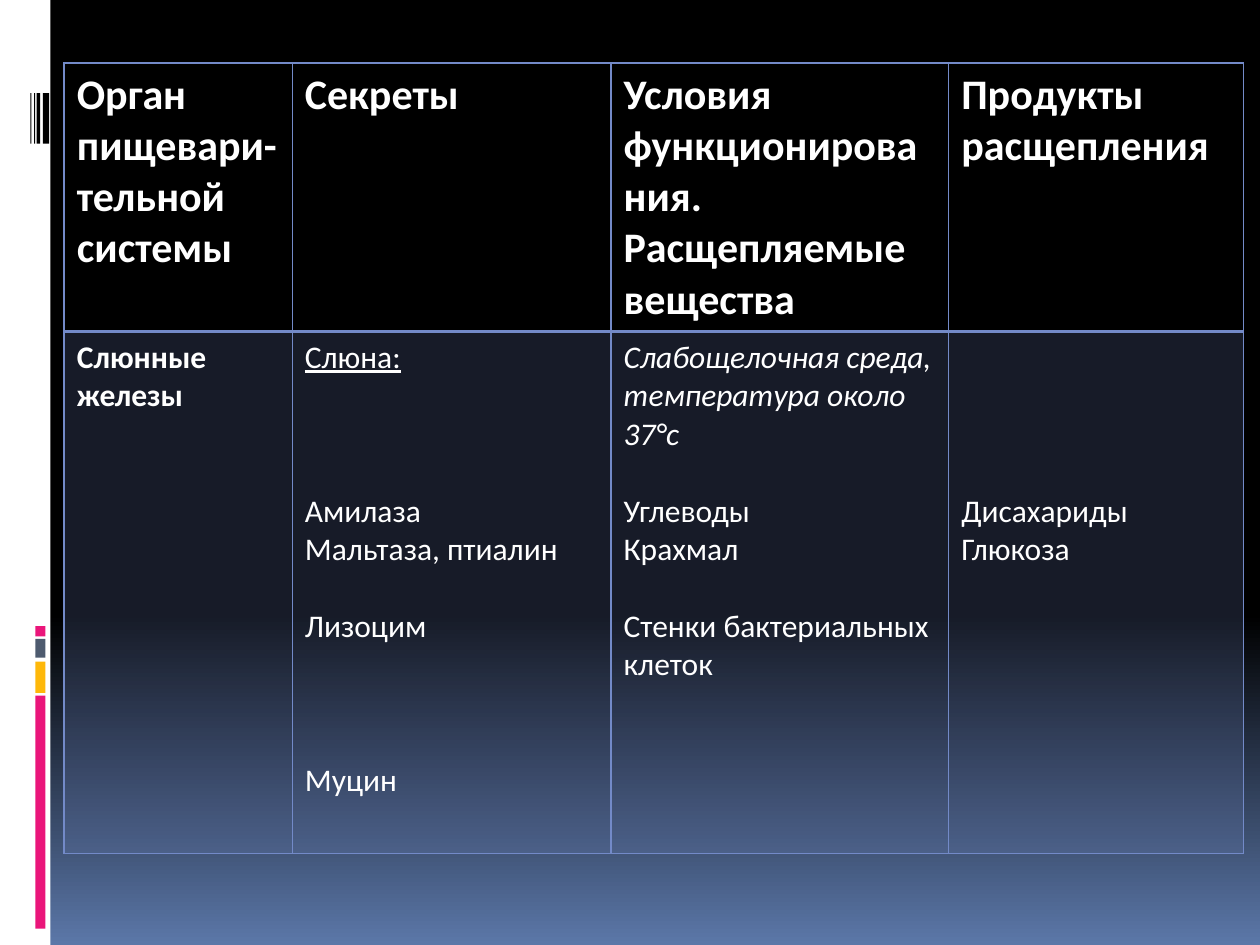
from dataclasses import dataclass
from lxml import etree
from pptx import Presentation
from pptx.dml.color import RGBColor
from pptx.enum import shapes
from pptx.oxml import ns
from pptx.util import Inches, Pt

BLUE = "738AC8"
LINE = 22


@dataclass
class Bar:
    left: float
    top: float
    width: float
    height: float
    color: str


@dataclass
class Para:
    text: str
    gap: int = 0
    bold: bool = False
    italic: bool = False
    under: bool = False


def paint(fill, color: str) -> None:
    fill.solid()
    fill.fore_color.rgb = RGBColor.from_string(color)


def draw_bar(slide, bar: Bar) -> None:
    box = slide.shapes.add_shape(
        shapes.MSO_SHAPE.RECTANGLE, Inches(bar.left), Inches(bar.top),
        Inches(bar.width), Inches(bar.height))
    box.shadow.inherit = False
    paint(box.fill, bar.color)
    box.line.fill.background()


def write(par, text: str, *, size=18, bold=False, italic=False,
          under=False, gap=0) -> None:
    par.space_before = Pt(gap * LINE)
    run = par.add_run()
    run.text = text
    font = run.font
    font.name, font.size = "Calibri", Pt(size)
    font.bold, font.italic, font.underline = bold, italic, under
    paint(font.fill, "FFFFFF")


def add_node(root, tag: str, **attrs: str):
    return etree.SubElement(root, ns.qn(tag), attrs)


def edge(cell, **widths: float) -> None:
    props = cell._tc.get_or_add_tcPr()
    for spot, (side, width) in enumerate(widths.items()):
        line = etree.Element(ns.qn(f"a:ln{side}"), w=str(Pt(width)))
        add_node(add_node(line, "a:solidFill"), "a:srgbClr", val=BLUE)
        props.insert(spot, line)


def fill_cell(cell, paras: list[Para], size: int) -> None:
    cell.margin_top = Inches(0.05) + Pt(paras[0].gap * LINE)
    frame = cell.text_frame
    for spot, para in enumerate(paras):
        par = frame.add_paragraph() if spot else frame.paragraphs[0]
        write(par, para.text, size=size, bold=para.bold, italic=para.italic,
              under=para.under, gap=para.gap if spot else 0)


BARS = [
    Bar(0, 0, 0.4, 7.5, "FFFFFF"),
    Bar(0.28, 5.52, 0.08, 1.85, "EA157A"),
    Bar(0.28, 5.25, 0.08, 0.25, "FEB80A"),
    Bar(0.28, 5.07, 0.08, 0.15, "4E5B6F"),
    Bar(0.28, 4.97, 0.08, 0.08, "EA157A"),
] + [Bar(left, 0.74, width, 0.4, "000000") for left, width in
     ((0.34, 0.05), (0.29, 0.03), (0.27, 0.01), (0.24, 0.01))]

HEADS = [
    ["Орган пищевари-", "тельной системы"],
    ["Секреты"],
    ["Условия функционирования. Расщепляемые вещества"],
    ["Продукты расщепления"],
]
BODY = [
    [Para("Слюнные железы", bold=True)],
    [Para("Слюна:", under=True), Para("Амилаза", 3),
     Para("Мальтаза, птиалин"), Para("Лизоцим", 1), Para("Муцин", 3)],
    [Para("Слабощелочная среда, температура около 37°с", italic=True),
     Para("Углеводы", 1), Para("Крахмал"),
     Para("Стенки бактериальных клеток", 1)],
    [Para("Дисахариды", 4), Para("Глюкоза")],
]
COLS = [1.81, 2.53, 2.68, 2.34]
ROWS = [2.13, 4.14]


def draw_table(slide) -> None:
    table = slide.shapes.add_table(
        len(ROWS), len(COLS), Inches(0.51), Inches(0.5),
        Inches(sum(COLS)), Inches(sum(ROWS))).table
    table.horz_banding = False
    for row, height in zip(table.rows, ROWS):
        row.height = Inches(height)
    for spot, width in enumerate(COLS):
        table.columns[spot].width = Inches(width)
        head, body = table.cell(0, spot), table.cell(1, spot)
        fill_cell(head, [Para(text, bold=True) for text in HEADS[spot]], 24)
        fill_cell(body, BODY[spot], 18)
        head.fill.background()
        paint(body.fill, BLUE)
        tint = body._tc.tcPr.find(".//" + ns.qn("a:srgbClr"))
        add_node(tint, "a:alpha", val="20000")
        edge(head, L=1, R=1, T=1, B=2)
        edge(body, L=1, R=1, T=2, B=1)


def main() -> None:
    deck = Presentation()
    deck.slide_width, deck.slide_height = Inches(10), Inches(7.5)
    slide = deck.slides.add_slide(deck.slide_layouts[6])
    back = slide.background.fill
    back.gradient()
    back.gradient_angle = 270
    for stop, (place, color) in zip(
            back.gradient_stops, ((0.65, "000000"), (1, "5B77A8"))):
        stop.position = place
        stop.color.rgb = RGBColor.from_string(color)
    for bar in BARS:
        draw_bar(slide, bar)
    draw_table(slide)
    deck.save("out.pptx")


if __name__ == "__main__":
    main()
